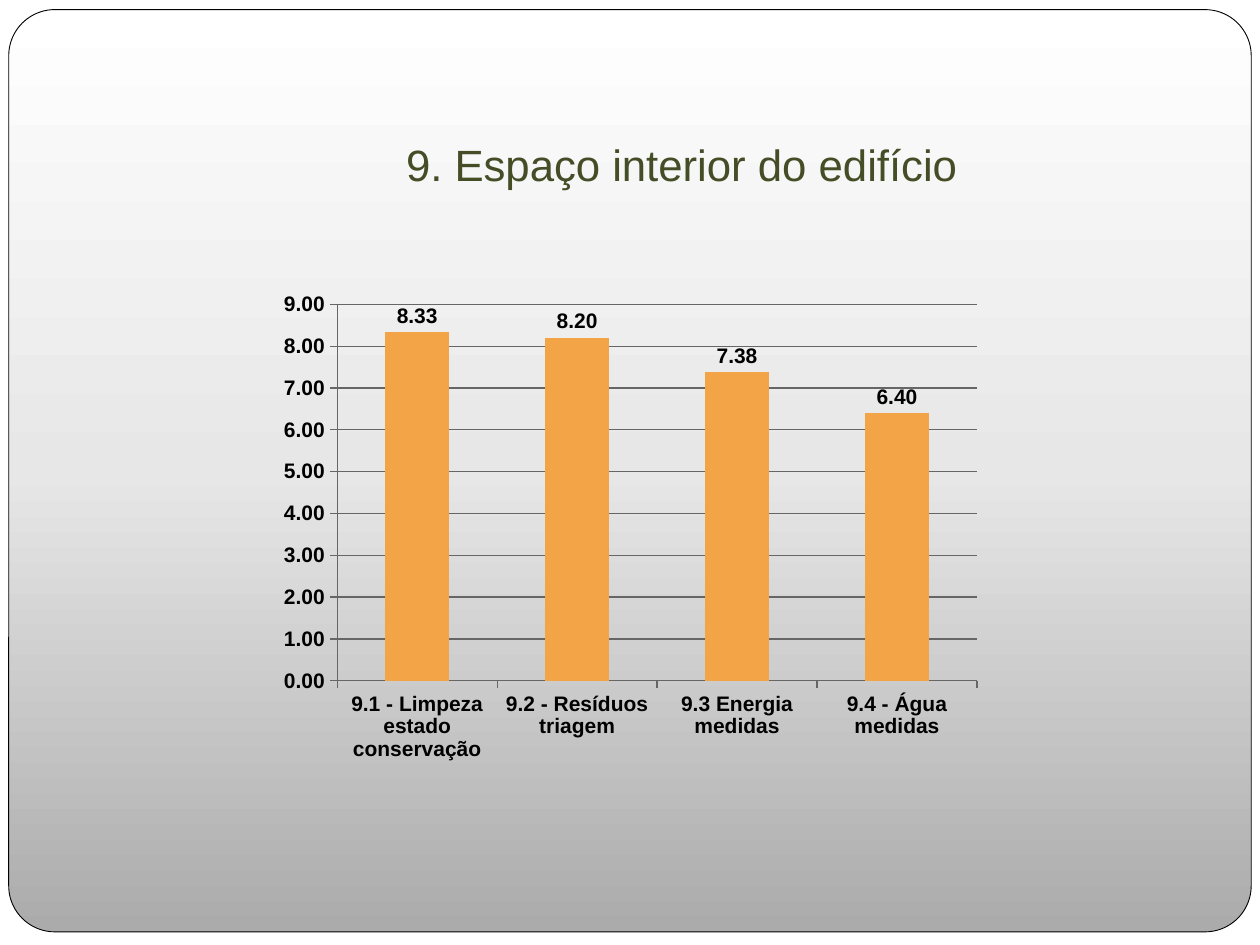
from copy import deepcopy

from pptx import Presentation
from pptx.chart.data import CategoryChartData
from pptx.dml.color import RGBColor
from pptx.enum.chart import XL_CHART_TYPE as ChartType
from pptx.enum.chart import XL_LABEL_POSITION as LabelPosition
from pptx.enum.chart import XL_TICK_MARK as TickMark
from pptx.enum.shapes import MSO_SHAPE as Shape
from pptx.enum.text import MSO_ANCHOR as Anchor
from pptx.enum.text import PP_ALIGN as Align
from pptx.util import Pt

FONT = "Arial"
AXIS_GREY = "666666"
SCORES = {
    "9.1 - Limpeza estado conservação": 8.33,
    "9.2 - Resíduos triagem": 8.2,
    "9.3 Energia medidas": 7.38,
    "9.4 - Água medidas": 6.4,
}


def color(hex_value):
    return RGBColor.from_string(hex_value)


def style_font(font, size, hex_value, bold=False):
    font.name = FONT
    font.size = Pt(size)
    font.bold = bold
    font.color.rgb = color(hex_value)


def fill_upward(fill, hex_values):
    """Fill with evenly spaced colours, the first at the bottom."""
    fill.gradient()
    fill.gradient_angle = 90
    first = fill.gradient_stops[0]._gs
    stop_list = first.getparent()
    while len(stop_list) < len(hex_values):
        stop_list.append(deepcopy(first))
    while len(stop_list) > len(hex_values):
        stop_list.remove(stop_list[-1])
    for index, hex_value in enumerate(hex_values):
        stop = fill.gradient_stops[index]
        stop.position = index / (len(hex_values) - 1)
        stop.color.rgb = color(hex_value)


def add_panel(page, left, top, width, height):
    panel = page.shapes.add_shape(
        Shape.ROUNDED_RECTANGLE, Pt(left), Pt(top), Pt(width), Pt(height))
    panel.adjustments[0] = 0.05
    panel.shadow.inherit = False
    fill_upward(panel.fill, ["ABABAB", "E7E7E7", "FFFFFF"])
    panel.line.color.rgb = color("000000")
    panel.line.width = Pt(0.5)


def add_title(page, left, top, width, height):
    box = page.shapes.add_textbox(Pt(left), Pt(top), Pt(width), Pt(height))
    frame = box.text_frame
    frame.word_wrap = True
    frame.vertical_anchor = Anchor.BOTTOM
    frame.margin_bottom = Pt(7.2)
    para = frame.paragraphs[0]
    para.alignment = Align.CENTER
    span = para.add_run()
    span.text = "9. Espaço interior do edifício"
    style_font(span.font, 25, "444D26")


def style_axis(axis):
    axis.major_tick_mark = TickMark.OUTSIDE
    axis.minor_tick_mark = TickMark.NONE
    axis.format.line.color.rgb = color(AXIS_GREY)
    axis.format.line.width = Pt(0.75)


def add_score_chart(page, left, top, width, height):
    data = CategoryChartData(number_format="0.00")
    data.categories = list(SCORES)
    data.add_series("Series 1", list(SCORES.values()))
    chart = page.shapes.add_chart(
        ChartType.COLUMN_CLUSTERED,
        Pt(left), Pt(top), Pt(width), Pt(height), data).chart
    style_font(chart.font, 12, "000000", bold=True)
    chart.has_legend = False
    chart.has_title = False

    style_axis(chart.category_axis)
    values = chart.value_axis
    style_axis(values)
    values.minimum_scale, values.maximum_scale, values.major_unit = 0, 9, 1
    values.tick_labels.number_format = "0.00"
    values.tick_labels.number_format_is_linked = False
    values.has_major_gridlines = True
    grid_line = values.major_gridlines.format.line
    grid_line.color.rgb = color(AXIS_GREY)
    grid_line.width = Pt(0.75)

    plot = chart.plots[0]
    plot.gap_width = 150
    plot.vary_by_categories = False
    bars = plot.series[0].format.fill
    bars.solid()
    bars.fore_color.rgb = color("F3A447")
    plot.has_data_labels = True
    labels = plot.data_labels
    labels.show_value = True
    labels.number_format = "0.00"
    labels.number_format_is_linked = False
    labels.position = LabelPosition.OUTSIDE_END
    style_font(labels.font, 12, "000000", bold=True)


def main():
    deck = Presentation()
    deck.slide_width, deck.slide_height = Pt(720), Pt(540)
    page = deck.slides.add_slide(deck.slide_layouts[6])
    page.background.fill.solid()
    page.background.fill.fore_color.rgb = color("FFFFFF")
    add_panel(page, 5, 5.5, 710, 527)
    add_title(page, 65.5, 26, 648, 90)
    add_score_chart(page, 154, 162, 412.5, 278)
    deck.save("out.pptx")


if __name__ == "__main__":
    main()
